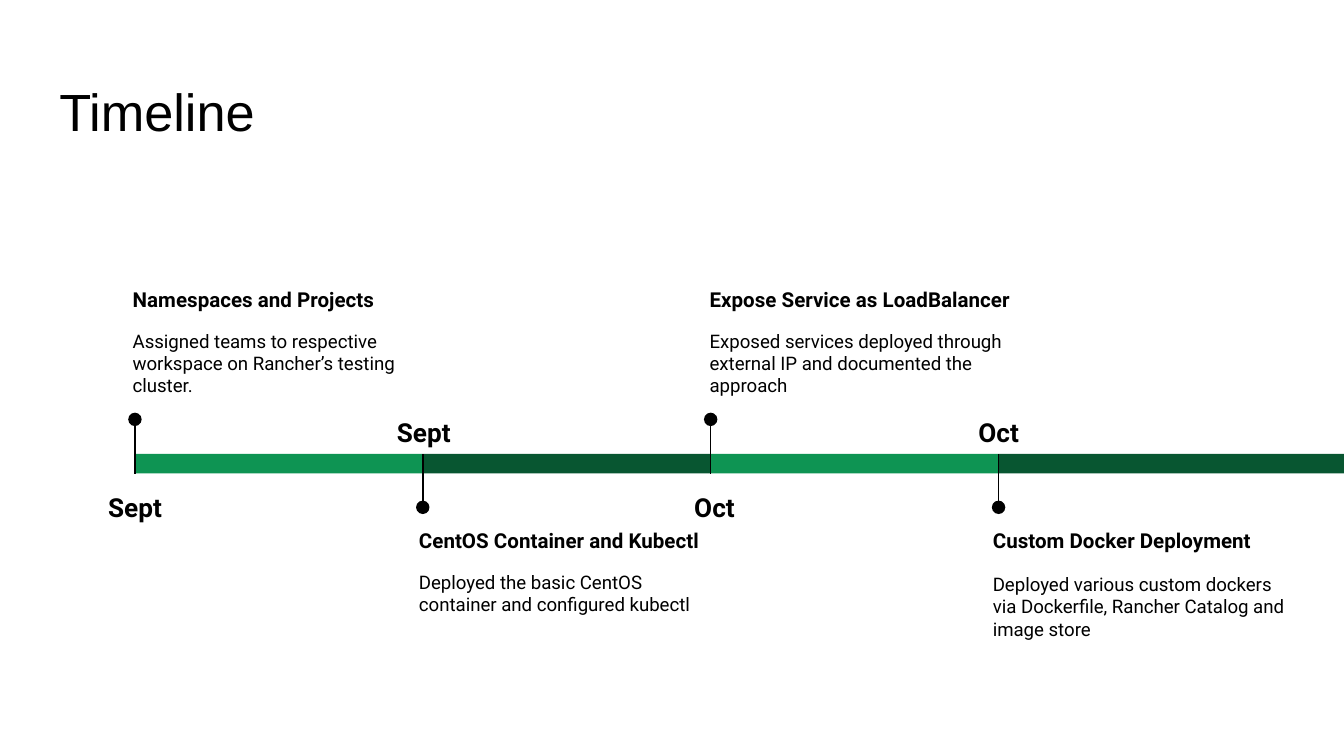
from dataclasses import dataclass

from lxml import etree
from pptx import Presentation
from pptx.dml.color import RGBColor
from pptx.enum.shapes import MSO_CONNECTOR, MSO_SHAPE
from pptx.enum.text import PP_ALIGN
from pptx.oxml.ns import qn
from pptx.util import Pt

RECTANGLE = MSO_SHAPE.RECTANGLE
OVAL = MSO_SHAPE.OVAL
STRAIGHT = MSO_CONNECTOR.STRAIGHT
LEFT = PP_ALIGN.LEFT
CENTER = PP_ALIGN.CENTER


@dataclass(frozen=True)
class Theme:
    ink: RGBColor = RGBColor(0x00, 0x00, 0x00)
    light_green: RGBColor = RGBColor(0x0E, 0x94, 0x53)
    dark_green: RGBColor = RGBColor(0x08, 0x56, 0x31)
    title_font: str = "Arial"
    text_font: str = "Roboto"
    title_size: float = 28
    month_size: float = 14
    heading_size: float = 11
    body_size: float = 10


@dataclass(frozen=True)
class Milestone:
    month: str
    month_shift: float
    text_left: float
    heading: str
    heading_gap: float
    body: str


THEME = Theme()
SLIDE_WIDTH, SLIDE_HEIGHT = 720, 405
FIRST_X, STEP = 72.3, 154.23
BAR_TOP, BAR_HEIGHT = 243.2, 10.5
STEM_LENGTH, DOT_SIZE = 28, 7.2
INSET = 7.2

MILESTONES = [
    Milestone("Sept", 0, 64, "Namespaces and Projects", 9.4,
              "Assigned teams to respective workspace on Rancher’s testing cluster."),
    Milestone("Sept", 0.5, 217.4, "CentOS Container and Kubectl", 9.4,
              "Deployed the basic CentOS container and configured kubectl"),
    Milestone("Oct", 2, 373.1, "Expose Service as LoadBalancer", 9.4,
              "Exposed services deployed through external IP and documented the approach"),
    Milestone("Oct", 0, 524.8, "Custom Docker Deployment", 10.5,
              "Deployed various custom dockers via Dockerfile, Rancher Catalog and "
              "image store"),
]


def add_text_frame(slide, left, top, width, height):
    box = slide.shapes.add_textbox(Pt(left), Pt(top), Pt(width), Pt(height))
    frame = box.text_frame
    frame.word_wrap = True
    frame.margin_left = frame.margin_right = Pt(INSET)
    frame.margin_top = frame.margin_bottom = Pt(INSET)
    return frame


def write(paragraph, text, *, size, font=THEME.text_font, bold=False,
          align=LEFT, line_spacing=1.0, space_after=0):
    paragraph.alignment = align
    paragraph.line_spacing = line_spacing
    paragraph.space_after = Pt(space_after)
    run = paragraph.add_run()
    run.text = text
    run.font.name = font
    run.font.size = Pt(size)
    run.font.bold = bold
    run.font.color.rgb = THEME.ink


def add_filled_shape(slide, kind, left, top, width, height, color):
    shape = slide.shapes.add_shape(kind, Pt(left), Pt(top), Pt(width), Pt(height))
    shape.shadow.inherit = False
    shape.fill.solid()
    shape.fill.fore_color.rgb = color
    shape.line.fill.background()


def add_stem(slide, x, start, end):
    stem = slide.shapes.add_connector(STRAIGHT, Pt(x), Pt(start), Pt(x), Pt(end))
    stem.line.color.rgb = THEME.ink
    stem.line.width = Pt(0.75)
    etree.SubElement(stem._element.spPr, qn("a:effectLst"))


def add_month(slide, text, center, top):
    width = 60
    frame = add_text_frame(slide, center - width / 2, top, width, 29.5)
    write(frame.paragraphs[0], text, size=THEME.month_size, bold=True,
          align=CENTER, line_spacing=1.15, space_after=16)


def add_description(slide, milestone, top):
    frame = add_text_frame(slide, milestone.text_left, top, 177.1, 74.2)
    write(frame.paragraphs[0], milestone.heading, size=THEME.heading_size,
          bold=True, space_after=milestone.heading_gap)
    write(frame.add_paragraph(), milestone.body, size=THEME.body_size, space_after=16)


def add_milestone(slide, index, milestone):
    x = FIRST_X + index * STEP
    is_last = index == len(MILESTONES) - 1
    bar_end = SLIDE_WIDTH if is_last else x + STEP
    bar_bottom = BAR_TOP + BAR_HEIGHT
    if index % 2 == 0:
        color = THEME.light_green
        stem_start, stem_end = bar_bottom - STEM_LENGTH, bar_bottom
        dot_center, month_top, text_top = 224.7, 253.4, 146.7
    else:
        color = THEME.dark_green
        stem_start, stem_end = BAR_TOP + STEM_LENGTH, BAR_TOP
        dot_center, month_top, text_top = 271.8, 213.1, 275.9
    add_filled_shape(slide, RECTANGLE, x, BAR_TOP, bar_end - x, BAR_HEIGHT, color)
    add_stem(slide, x, stem_start, stem_end)
    add_filled_shape(slide, OVAL, x - DOT_SIZE / 2, dot_center - DOT_SIZE / 2,
                     DOT_SIZE, DOT_SIZE, THEME.ink)
    add_month(slide, milestone.month, x + milestone.month_shift, month_top)
    add_description(slide, milestone, text_top)


def main():
    presentation = Presentation()
    presentation.slide_width = Pt(SLIDE_WIDTH)
    presentation.slide_height = Pt(SLIDE_HEIGHT)
    slide = presentation.slides.add_slide(presentation.slide_layouts[6])
    title = add_text_frame(slide, 24.7, 35.3, 671, 45.4)
    write(title.paragraphs[0], "Timeline", size=THEME.title_size, font=THEME.title_font)
    for index, milestone in enumerate(MILESTONES):
        add_milestone(slide, index, milestone)
    presentation.save("out.pptx")


if __name__ == "__main__":
    main()
